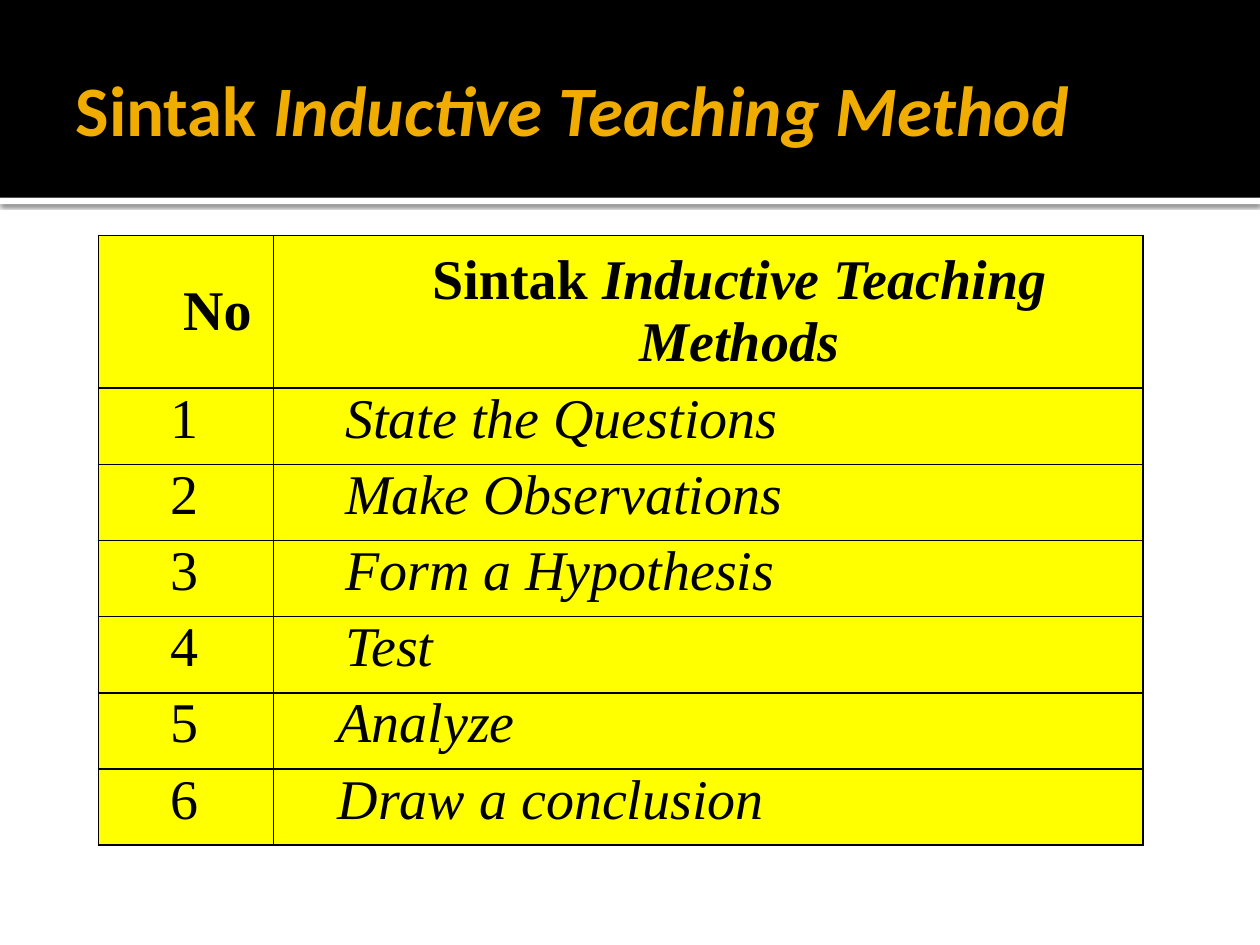
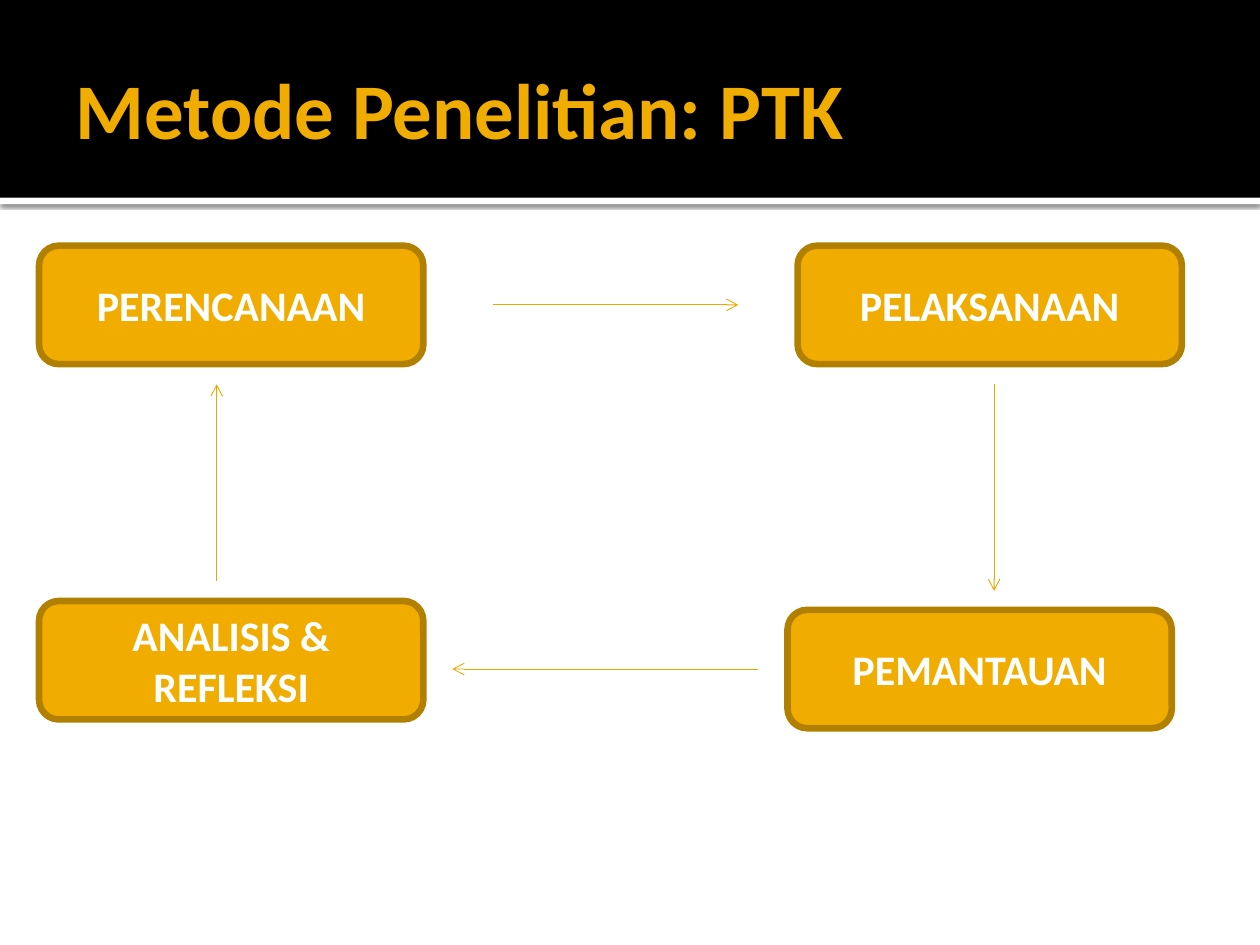
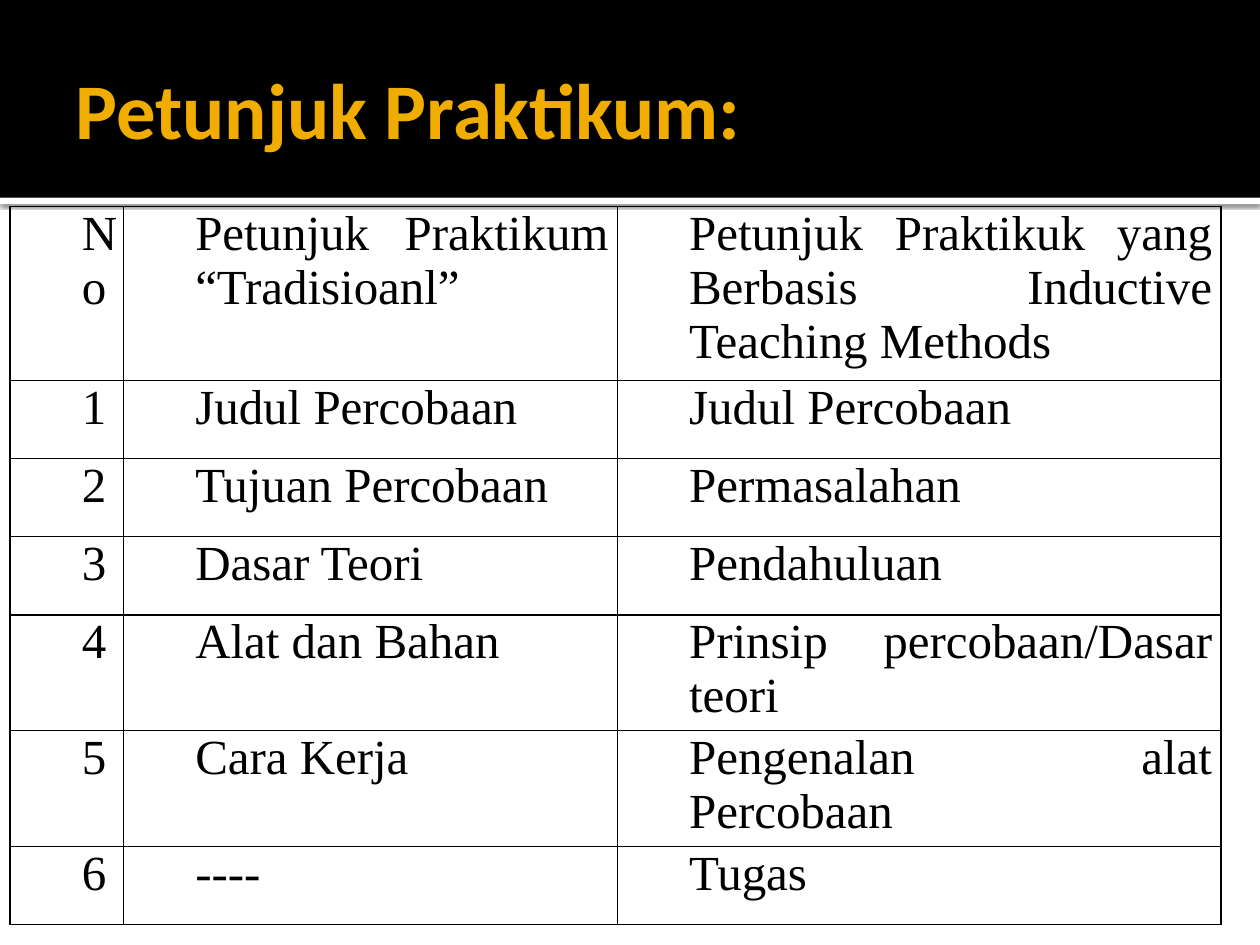
"""Build three slides on inductive teaching: two tables and an action research cycle."""
from lxml.etree import SubElement
from pptx import Presentation
from pptx.dml.color import RGBColor
from pptx.enum.shapes import MSO_CONNECTOR, MSO_SHAPE
from pptx.enum.text import MSO_ANCHOR, PP_ALIGN
from pptx.oxml.ns import qn
from pptx.util import Inches, Pt

COLORS = {
    "black": "000000",
    "white": "FFFFFF",
    "gold": "F0AD00",
    "dark_gold": "B28000",
    "arrow": "EBA900",
    "yellow": "FFFF00",
}
HEADING_FONT = "Calibri"
TABLE_FONT = "Times New Roman"
BAND_HEIGHT = 1.57
STRIP_HEIGHT = 0.05
CELL_INDENT = 0.5
NARROW_INDENT = 0.44

SYNTAX_TITLE = [("Sintak ", False), ("Inductive Teaching Method", True)]
SYNTAX_HEADER = ["No", [("Sintak ", False), ("Inductive Teaching Methods", True)]]
SYNTAX_STEPS = [
    "State the Questions",
    "Make Observations",
    "Form a Hypothesis",
    "Test",
    "Analyze",
    "Draw a conclusion",
]
NARROW_STEPS = ["Analyze", "Draw a conclusion"]

CYCLE_TITLE = "Metode Penelitian: PTK"
STAGE_SIZE = (3.05, 0.94)
STAGES = [
    ("PERENCANAAN", 0.31, 1.95),
    ("PELAKSANAAN", 6.33, 1.95),
    ("PEMANTAUAN", 6.25, 4.84),
    ("ANALISIS & REFLEKSI", 0.31, 4.77),
]
ARROWS = [
    (3.91, 2.42, 5.86, 2.42),
    (7.89, 3.05, 7.89, 4.69),
    (6.02, 5.31, 3.59, 5.31),
    (1.72, 4.61, 1.72, 3.05),
]

GUIDE_TITLE = "Petunjuk Praktikum:"
GUIDE_ROWS = [
    ("No", "Petunjuk Praktikum “Tradisioanl”",
     "Petunjuk Praktikuk yang Berbasis Inductive Teaching Methods"),
    ("1", "Judul Percobaan", "Judul Percobaan"),
    ("2", "Tujuan Percobaan", "Permasalahan"),
    ("3", "Dasar Teori", "Pendahuluan"),
    ("4", "Alat dan Bahan", "Prinsip percobaan/Dasar teori"),
    ("5", "Cara Kerja", "Pengenalan alat Percobaan"),
    ("6", "----", "Tugas"),
]


def color(name):
    return RGBColor.from_string(COLORS[name])


def write(paragraph, content, size, font, color_name, bold=False):
    """Fill a paragraph from a string or a list of (text, italic) pairs."""
    pieces = [(content, False)] if isinstance(content, str) else content
    for text, italic in pieces:
        run = paragraph.add_run()
        run.text = text
        run.font.size = Pt(size)
        run.font.name = font
        run.font.bold = bold
        run.font.italic = italic
        run.font.color.rgb = color(color_name)


def add_band(slide, top, height, color_name):
    """Place a full-width band behind the title."""
    band = slide.shapes.add_shape(
        MSO_SHAPE.RECTANGLE, 0, Inches(top), Inches(10), Inches(height))
    band.shadow.inherit = False
    band.fill.solid()
    band.fill.fore_color.rgb = color(color_name)
    band.line.fill.background()
    slide.shapes.title.element.addprevious(band.element)
    return band


def add_strip_shadow(strip):
    """Give the strip a soft shadow below it."""
    effects = strip.element.spPr.find(qn("a:effectLst"))
    shadow = SubElement(effects, qn("a:outerShdw"), blurRad=str(Pt(2.5)),
                        dist=str(Pt(0.8)), dir="5400000", algn="tl", rotWithShape="0")
    shade = SubElement(shadow, qn("a:srgbClr"), val=COLORS["black"])
    SubElement(shade, qn("a:alpha"), val="60000")


def add_titled_slide(presentation, content, size=45):
    """Add a slide with the shared bands and title style."""
    slide = presentation.slides.add_slide(presentation.slide_layouts[5])
    add_strip_shadow(add_band(slide, BAND_HEIGHT, STRIP_HEIGHT, "white"))
    add_band(slide, 0, BAND_HEIGHT, "black")
    title = slide.shapes.title
    title.left, title.top = Inches(0.5), Inches(0.17)
    title.width, title.height = Inches(9), Inches(1.37)
    frame = title.text_frame
    frame.vertical_anchor = MSO_ANCHOR.MIDDLE
    frame.margin_left = Inches(0.1)
    frame.margin_top = frame.margin_right = frame.margin_bottom = Inches(0.05)
    frame.paragraphs[0].alignment = PP_ALIGN.LEFT
    write(frame.paragraphs[0], content, size, HEADING_FONT, "gold", bold=True)
    return slide


def add_borders(cell):
    """Draw a thin black line on each side of a cell."""
    properties = cell._tc.get_or_add_tcPr()
    for side in ("lnL", "lnR", "lnT", "lnB"):
        line = SubElement(properties, qn(f"a:{side}"), w=str(Pt(1)))
        fill = SubElement(line, qn("a:solidFill"))
        SubElement(fill, qn("a:srgbClr"), val=COLORS["black"])


def format_cell(cell, content, size, fill_name, is_header, indent):
    """Write and style one cell."""
    add_borders(cell)
    if fill_name:
        cell.fill.solid()
        cell.fill.fore_color.rgb = color(fill_name)
    else:
        cell.fill.background()
    cell.margin_left = cell.margin_right = Inches(0.07)
    cell.margin_top = cell.margin_bottom = 0
    cell.vertical_anchor = MSO_ANCHOR.MIDDLE if is_header else MSO_ANCHOR.TOP
    paragraph = cell.text_frame.paragraphs[0]
    paragraph.alignment = PP_ALIGN.CENTER if is_header else PP_ALIGN.JUSTIFY
    properties = paragraph._p.get_or_add_pPr()
    properties.set("marL", str(Inches(indent)))
    properties.set("indent", "0")
    write(paragraph, content, size, TABLE_FONT, "black", bold=is_header)


def add_grid(slide, rows, left, top, widths, heights, size,
             fill_name=None, bold_header=False, narrow=()):
    """Add a bordered table."""
    frame = slide.shapes.add_table(
        len(rows), len(widths), Inches(left), Inches(top),
        Inches(sum(widths)), Inches(sum(heights)))
    table = frame.table
    table.first_row = table.horz_banding = False
    for column, width in zip(table.columns, widths):
        column.width = Inches(width)
    for row_index, (row, height) in enumerate(zip(rows, heights)):
        table.rows[row_index].height = Inches(height)
        for column_index, content in enumerate(row):
            indent = NARROW_INDENT if (row_index, column_index) in narrow else CELL_INDENT
            format_cell(table.cell(row_index, column_index), content, size,
                        fill_name, bold_header and row_index == 0, indent)


def add_stage(slide, label, left, top):
    """Add one rounded box of the cycle."""
    width, height = STAGE_SIZE
    stage = slide.shapes.add_shape(
        MSO_SHAPE.ROUNDED_RECTANGLE, Inches(left), Inches(top),
        Inches(width), Inches(height))
    stage.shadow.inherit = False
    stage.fill.solid()
    stage.fill.fore_color.rgb = color("gold")
    stage.line.color.rgb = color("dark_gold")
    stage.line.width = Pt(3.78)
    frame = stage.text_frame
    frame.word_wrap = True
    frame.vertical_anchor = MSO_ANCHOR.MIDDLE
    frame.paragraphs[0].alignment = PP_ALIGN.CENTER
    write(frame.paragraphs[0], label, 24, HEADING_FONT, "white", bold=True)


def add_arrow(slide, *ends):
    """Add a thin arrow between two points."""
    arrow = slide.shapes.add_connector(
        MSO_CONNECTOR.STRAIGHT, *(Inches(value) for value in ends))
    arrow.line.color.rgb = color("arrow")
    arrow.line.width = Pt(0.5)
    properties = arrow.element.spPr
    SubElement(properties.find(qn("a:ln")), qn("a:tailEnd"), type="arrow")
    SubElement(properties, qn("a:effectLst"))


def main():
    presentation = Presentation()
    presentation.slide_width = Inches(10)
    presentation.slide_height = Inches(7.5)

    syntax_slide = add_titled_slide(presentation, SYNTAX_TITLE, 40.5)
    steps = [[str(number), [(step, True)]] for number, step in enumerate(SYNTAX_STEPS, 1)]
    narrow = [(SYNTAX_STEPS.index(step) + 1, 1) for step in NARROW_STEPS]
    add_grid(syntax_slide, [SYNTAX_HEADER] + steps, 0.78, 1.87, [1.39, 6.9],
             [1.21] + [0.605] * len(steps), 32, "yellow", True, narrow)

    cycle_slide = add_titled_slide(presentation, CYCLE_TITLE)
    for stage in STAGES:
        add_stage(cycle_slide, *stage)
    for arrow in ARROWS:
        add_arrow(cycle_slide, *arrow)

    guide_slide = add_titled_slide(presentation, GUIDE_TITLE)
    add_grid(guide_slide, GUIDE_ROWS, 0.08, 1.64, [0.9, 3.92, 4.79],
             [1.38, 0.62, 0.62, 0.62, 0.92, 0.92, 0.62], 28)

    presentation.save("out.pptx")


if __name__ == "__main__":
    main()
